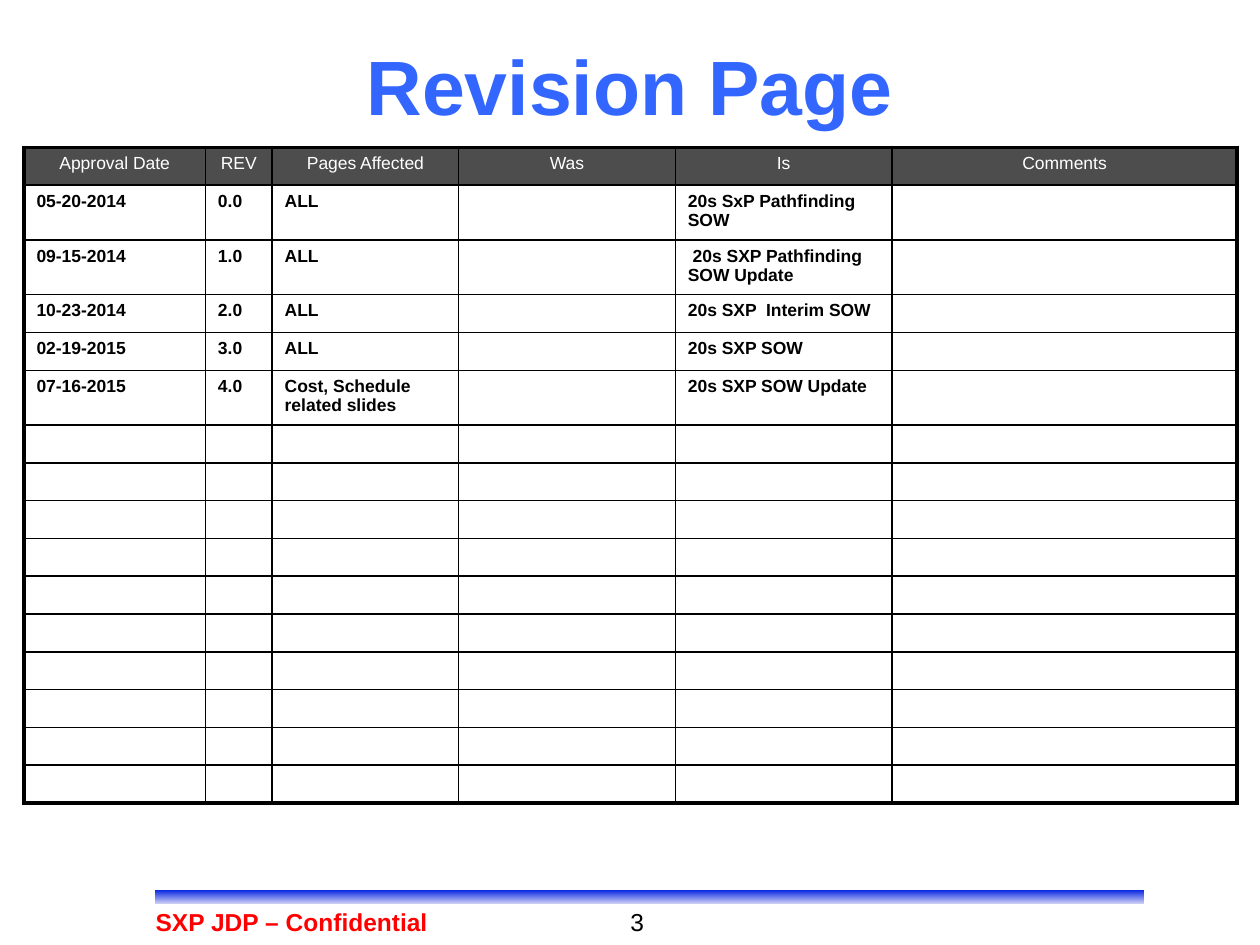
from lxml import etree
from pptx import Presentation
from pptx.dml.color import RGBColor
from pptx.enum.shapes import MSO_SHAPE
from pptx.enum.text import MSO_ANCHOR, PP_ALIGN
from pptx.oxml.ns import qn
from pptx.util import Inches, Pt

LEFT, CENTER, RIGHT = PP_ALIGN.LEFT, PP_ALIGN.CENTER, PP_ALIGN.RIGHT
TOP, MIDDLE = MSO_ANCHOR.TOP, MSO_ANCHOR.MIDDLE
RECTANGLE = MSO_SHAPE.RECTANGLE

FONT = "Arial"
BLACK = RGBColor(0x00, 0x00, 0x00)
WHITE = RGBColor(0xFF, 0xFF, 0xFF)
RED = RGBColor(0xFF, 0x00, 0x00)
TITLE_BLUE = RGBColor(0x33, 0x66, 0xFF)
HEADER_GRAY = RGBColor(0x4D, 0x4D, 0x4D)
BAR_BLUE = RGBColor(0x00, 0x20, 0xE0)
BAR_PALE = RGBColor(0xDA, 0xDA, 0xF6)

THIN, THICK = 1, 2.25
COL_WIDTHS = [1.44, 0.53, 1.48, 1.72, 1.72, 2.74]
ROW_COUNT = 16
ROW_HEIGHT, FIRST_ENTRY_HEIGHT = 0.3, 0.4
HEADERS = ["Approval Date", "REV", "Pages Affected", "Was", "Is", "Comments"]
REVISIONS = [
    ["05-20-2014", "0.0", "ALL", "", "20s SxP Pathfinding SOW", ""],
    ["09-15-2014", "1.0", "ALL", "", " 20s SXP Pathfinding SOW Update", ""],
    ["10-23-2014", "2.0", "ALL", "", "20s SXP  Interim SOW", ""],
    ["02-19-2015", "3.0", "ALL", "", "20s SXP SOW", ""],
    ["07-16-2015", "4.0", "Cost, Schedule related slides", "",
     "20s SXP SOW Update", ""],
]


def write(tf, text, size, color, bold=False, align=LEFT):
    tf.text = text
    p = tf.paragraphs[0]
    p.alignment = align
    for r in p.runs:
        r.font.name = FONT
        r.font.size = Pt(size)
        r.font.bold = bold
        r.font.color.rgb = color
    if not text:
        # Keeps an empty cell as low as a filled one
        etree.SubElement(p._p, qn("a:endParaRPr"), sz=str(size * 100))


def add_text(slide, box, text, size, color, bold=False, align=CENTER, anchor=TOP):
    tf = slide.shapes.add_textbox(*map(Inches, box)).text_frame
    tf.word_wrap = True
    tf.vertical_anchor = anchor
    write(tf, text, size, color, bold, align)


def add_bar(slide, box):
    sp = slide.shapes.add_shape(RECTANGLE, *map(Inches, box))
    sp.shadow.inherit = False
    sp.fill.gradient()
    sp.fill.gradient_angle = 270
    for stop, color, position in zip(sp.fill.gradient_stops, (BAR_BLUE, BAR_PALE), (0, 1)):
        stop.color.rgb = color
        stop.position = position
    sp.line.color.rgb = WHITE
    sp.line.width = Pt(1)


def set_borders(cell, **widths):
    tc_pr = cell._tc.get_or_add_tcPr()
    for side in ("L", "R", "T", "B"):
        ln = etree.SubElement(tc_pr, qn("a:ln" + side), w=str(Pt(widths[side])))
        fill = etree.SubElement(ln, qn("a:solidFill"))
        etree.SubElement(fill, qn("a:srgbClr"), val=str(BLACK))


def add_revision_table(slide, left, top):
    heights = [ROW_HEIGHT] * ROW_COUNT
    heights[1] = FIRST_ENTRY_HEIGHT
    last_row, last_col = ROW_COUNT - 1, len(COL_WIDTHS) - 1
    table = slide.shapes.add_table(
        ROW_COUNT, len(COL_WIDTHS), Inches(left), Inches(top),
        Inches(sum(COL_WIDTHS)), Inches(sum(heights))).table
    table.first_row = table.horz_banding = False
    for column, width in zip(table.columns, COL_WIDTHS):
        column.width = Inches(width)
    for row, height in zip(table.rows, heights):
        row.height = Inches(height)

    blank_rows = [[""] * len(COL_WIDTHS)] * (last_row - len(REVISIONS))
    for i, values in enumerate([HEADERS] + REVISIONS + blank_rows):
        for j, text in enumerate(values):
            cell = table.cell(i, j)
            set_borders(cell,
                        L=THICK if j == 0 else THIN,
                        R=THICK if j == last_col else THIN,
                        T=THICK if i == 0 else THIN,
                        B=THICK if i == last_row else THIN)
            if i == 0:
                cell.fill.solid()
                cell.fill.fore_color.rgb = HEADER_GRAY
                write(cell.text_frame, text, 10, WHITE, align=CENTER)
            else:
                cell.fill.background()
                write(cell.text_frame, text, 10, BLACK, bold=True)


def main():
    prs = Presentation()
    prs.slide_width, prs.slide_height = Inches(10), Inches(7.5)
    slide = prs.slides.add_slide(prs.slide_layouts[6])

    # Footer bar
    add_bar(slide, (1.22, 7.06, 7.87, 0.12))

    # Title and revision history
    add_text(slide, (0.5, 0.3, 9, 0.75), "Revision Page", 44, TITLE_BLUE,
             bold=True, anchor=MIDDLE)
    add_revision_table(slide, 0.19, 1.17)

    # Page number and confidentiality mark
    add_text(slide, (4.07, 7.15, 1.14, 0.27), "3", 14, BLACK, align=RIGHT)
    add_text(slide, (0.72, 7.15, 3.19, 0.26), "SXP JDP – Confidential", 14, RED, bold=True)

    prs.save("out.pptx")


if __name__ == "__main__":
    main()
